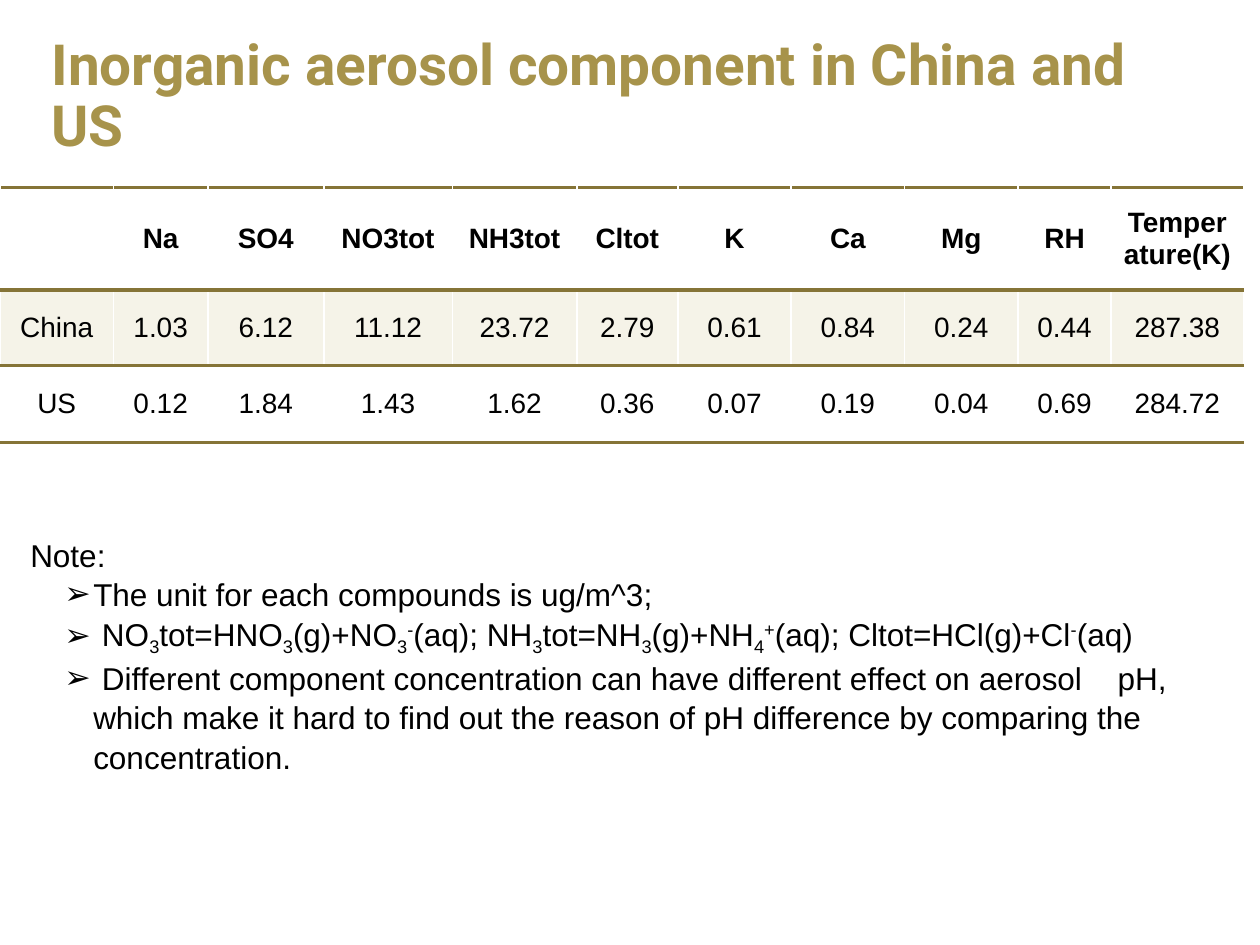
from lxml import etree
from pptx import Presentation
from pptx.dml.color import RGBColor
from pptx.enum import text
from pptx.oxml import ns
from pptx.util import Inches, Pt

DARK, GOLD, RULE, TINT = "000000", "A7934B", "857437", "F5F3E8"


def style(font, color, **vals):
    font.color.rgb = RGBColor.from_string(color)
    for key, val in vals.items():
        setattr(font, key, val)


def rule(cell, side):
    line = etree.SubElement(cell._tc.get_or_add_tcPr(), ns.qn("a:" + side), w=str(Pt(2.25)))
    fill = etree.SubElement(line, ns.qn("a:solidFill"))
    etree.SubElement(fill, ns.qn("a:srgbClr"), val=RULE)


deck = Presentation()
deck.slide_width, deck.slide_height = Inches(10), Inches(7.5)
slide = deck.slides.add_slide(deck.slide_layouts[1])
title, notes = slide.placeholders

# Place the title and the notes
spots = [(title, (0.31, 0.22, 9.38, 1.11)), (notes, (0.14, 4.19, 9.72, 1.92))]
for box, spot in spots:
    for key, val in zip(("left", "top", "width", "height"), spot):
        setattr(box, key, Inches(val))

# Title
title.text_frame.text = "Inorganic aerosol component in China and US"
title.text_frame.auto_size = text.MSO_AUTO_SIZE.NONE
title.text_frame.vertical_anchor = text.MSO_ANCHOR.MIDDLE
head = title.text_frame.paragraphs[0]
head.alignment, head.line_spacing = text.PP_ALIGN.LEFT, 0.9
style(head.font, GOLD, name="Roboto", size=Pt(32.4), bold=True)

# Table of concentrations
rows = [
    ["", "Na", "SO4", "NO3tot", "NH3tot", "Cltot", "K", "Ca", "Mg", "RH", "Temperature(K)"],
    ["China", "1.03", "6.12", "11.12", "23.72", "2.79", "0.61", "0.84", "0.24", "0.44", "287.38"],
    ["US", "0.12", "1.84", "1.43", "1.62", "0.36", "0.07", "0.19", "0.04", "0.69", "284.72"],
]
wide = [0.9, 0.75, 0.92, 1.02, 0.99, 0.8, 0.9, 0.9, 0.9, 0.74, 1.05]
high = [0.81, 0.6, 0.61]
table = slide.shapes.add_table(
    len(rows), len(wide), Inches(0), Inches(1.49), Inches(sum(wide)), Inches(sum(high))).table
table.first_row = table.horz_banding = False
for col, size in zip(table.columns, wide):
    col.width = Inches(size)
for i, row in enumerate(rows):
    table.rows[i].height = Inches(high[i])
    for cell, word in zip(table.rows[i].cells, row):
        cell.text = word
        cell.vertical_anchor = text.MSO_ANCHOR.MIDDLE
        para = cell.text_frame.paragraphs[0]
        para.alignment = text.PP_ALIGN.CENTER
        style(para.font, DARK, name="Arial", size=Pt(16), bold=i == 0)
        rule(cell, "lnT")
        if i == len(rows) - 1:
            rule(cell, "lnB")
        if i == 1:
            cell.fill.solid()
            cell.fill.fore_color.rgb = RGBColor.from_string(TINT)
        else:
            cell.fill.background()

# Notes: each run is a text with its run attributes
SUB, SUP, GAP = {"baseline": "-25000"}, {"baseline": "30000"}, {"spc": "1500"}
lines = [
    [("Note:", {})],
    [("The unit for each compounds is ug/m^3;", {})],
    [(" NO", {}), ("3", SUB), ("tot=HNO", {}), ("3", SUB), ("(g)+NO", {}), ("3", SUB),
     ("-", SUP), ("(aq); NH", {}), ("3", SUB), ("tot=NH", {}), ("3", SUB), ("(g)+NH", {}),
     ("4", SUB), ("+", SUP), ("(aq); Cltot=HCl(g)+Cl", {}), ("-", SUP), ("(aq)", {})],
    [(" Different component concentration can have different effect on aerosol", {}), (" ", GAP),
     ("pH, which make it hard to find out the reason of pH difference by comparing the "
      "concentration.", {})],
]
frame = notes.text_frame
frame.word_wrap = True
frame.auto_size = text.MSO_AUTO_SIZE.SHAPE_TO_FIT_TEXT
frame.vertical_anchor = text.MSO_ANCHOR.TOP
for i, runs in enumerate(lines):
    para = frame.add_paragraph() if i else frame.paragraphs[0]
    para.space_before, para.line_spacing = Pt(0), 1.04
    props = para._p.get_or_add_pPr()
    if i:
        para.level = 1
        props.set("marL", str(Inches(0.5)))
        props.set("indent", str(Inches(-0.23)))
        etree.SubElement(props, ns.qn("a:buFont"), typeface="Arial")
        etree.SubElement(props, ns.qn("a:buChar"), char="➢")
    else:
        props.set("marL", "0")
        props.set("indent", "0")
        etree.SubElement(props, ns.qn("a:buNone"))
    for words, marks in runs:
        run = para.add_run()
        run.text = words
        style(run.font, DARK, name="Arial", size=Pt(18))
        for key, val in marks.items():
            run._r.get_or_add_rPr().set(key, val)

deck.save("out.pptx")
